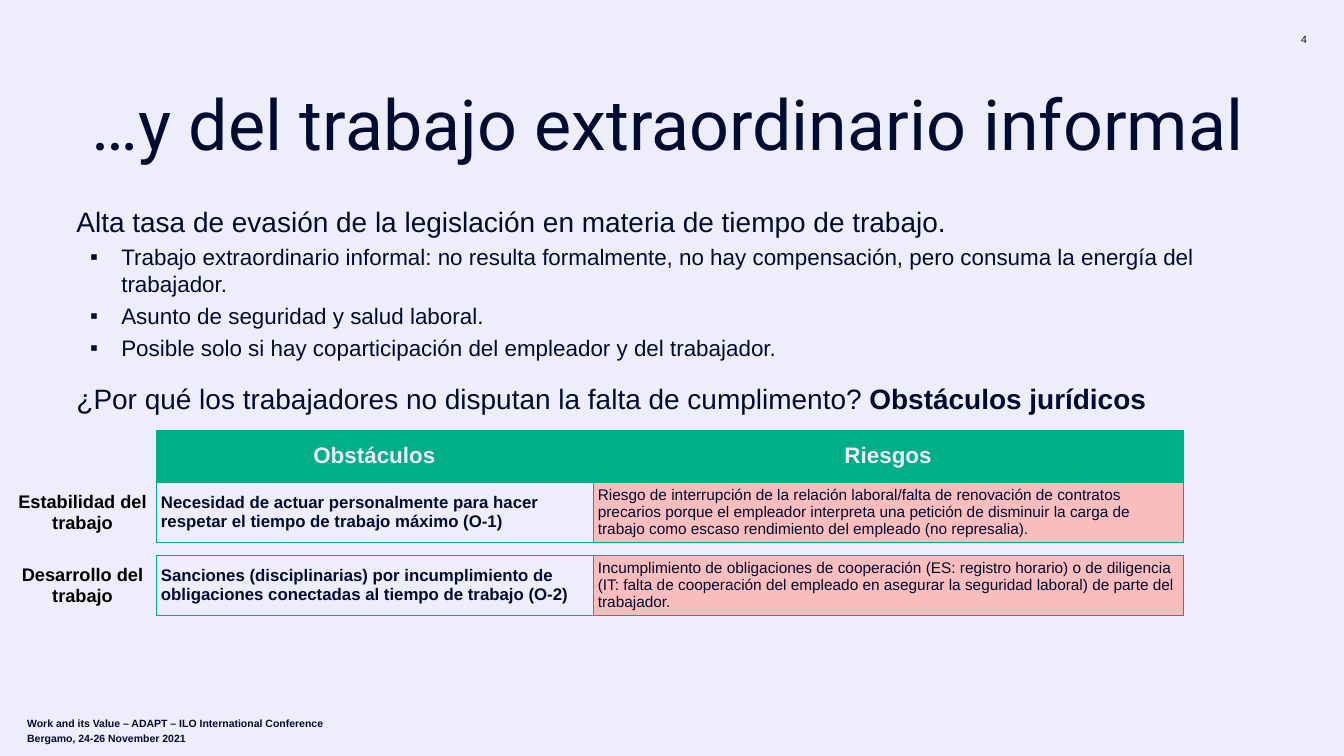
"""Build the slide on informal overtime: obstacles and risks for workers."""
from lxml.etree import SubElement
from pptx import Presentation
from pptx.dml.color import RGBColor as Rgb
from pptx.enum.text import MSO_ANCHOR as Anchor, PP_ALIGN as Align
from pptx.oxml.ns import qn
from pptx.util import Inches, Pt

COLORS = {"page": "EDEDFB", "ink": "000B32", "black": "000000",
          "header": "00AE88", "edge": "00AA85", "risk": "F9BDBE"}

deck = Presentation()
deck.slide_width, deck.slide_height = Inches(26.67), Inches(15)
slide = deck.slides.add_slide(deck.slide_layouts[6])
slide.background.fill.solid()
slide.background.fill.fore_color.rgb = Rgb.from_string(COLORS["page"])
COL, ROW = deck.slide_width / 100, deck.slide_height / 100


def text_frame(left, top, width, height, wrap=True):
    frame = slide.shapes.add_textbox(
        int(left * COL), int(top * ROW), int(width * COL), int(height * ROW)).text_frame
    frame.word_wrap = wrap
    return frame


def add_run(paragraph, words, size, color="ink", bold=False, face="Arial"):
    run = paragraph.add_run()
    run.text = words
    run.font.size, run.font.bold, run.font.name = Pt(size), bold, face
    run.font.color.rgb = Rgb.from_string(COLORS[color])


page_number = text_frame(96.25, 3.8, 1.54, 2.73, wrap=False)
page_number.margin_left = page_number.margin_right = Inches(0.08)
page_number.margin_top = page_number.margin_bottom = Inches(0.08)
page_number.paragraphs[0].alignment = Align.CENTER
add_run(page_number.paragraphs[0], "4", 15)

title = text_frame(2.89, 12.13, 93.59, 9.93)
title.vertical_anchor = Anchor.BOTTOM
title.paragraphs[0].alignment = Align.CENTER
title.paragraphs[0].line_spacing = 0.8
add_run(title.paragraphs[0], "…y del trabajo extraordinario informal", 100, face="Roboto")

body = text_frame(5.32, 26.67, 86.58, 59.33)
add_run(body.paragraphs[0],
        "Alta tasa de evasión de la legislación en materia de tiempo de trabajo.", 40)
for point in (
        "Trabajo extraordinario informal: no resulta formalmente, no hay compensación, "
        "pero consuma la energía del trabajador.",
        "Asunto de seguridad y salud laboral.",
        "Posible solo si hay coparticipación del empleador y del trabajador."):
    bullet = body.add_paragraph()
    bullet.level = 1
    bullet.space_before = Pt(7.5)
    props = bullet._p.get_or_add_pPr()
    props.set("marL", str(Inches(0.89)))
    props.set("indent", str(Inches(-0.62)))
    SubElement(props, qn("a:buFont"), typeface="Arial")
    SubElement(props, qn("a:buChar"), char="▪")
    add_run(bullet, point, 32)
question = body.add_paragraph()
question.space_before = Pt(29)
add_run(question, "¿Por qué los trabajadores no disputan la falta de cumplimento? ", 40)
add_run(question, "Obstáculos jurídicos", 40, bold=True)

footer = text_frame(1.65, 94.47, 27, 2.6)
add_run(footer.paragraphs[0],
        "Work and its Value – ADAPT – ILO International Conference", 15, bold=True)
venue = footer.add_paragraph()
venue.space_before = Pt(3.5)
add_run(venue, "Bergamo, 24-26 November 2021", 15, bold=True)

HEADINGS = ("Obstáculos", "Riesgos")
STABILITY = (
    "Necesidad de actuar personalmente para hacer respetar el tiempo de trabajo máximo (O-1)",
    "Riesgo de interrupción de la relación laboral/falta de renovación de contratos precarios "
    "porque el empleador interpreta una petición de disminuir la carga de trabajo como escaso "
    "rendimiento del empleado (no represalia).")
PROGRESS = (
    "Sanciones (disciplinarias) por incumplimiento de obligaciones conectadas al tiempo de "
    "trabajo (O-2)",
    "Incumplimiento de obligaciones de cooperación (ES: registro horario) o de diligencia "
    "(IT: falta de cooperación del empleado en asegurar la seguridad laboral) de parte del "
    "trabajador.")
SHARES, ROW_SHARE = (32.51, 43.94), 6.8

for top, lines in ((56.93, (HEADINGS, STABILITY)), (73.4, (PROGRESS,))):
    grid = slide.shapes.add_table(
        len(lines), 2, int(11.6 * COL), int(top * ROW), int(sum(SHARES) * COL),
        int(ROW_SHARE * len(lines) * ROW)).table
    grid.first_row = grid.horz_banding = False
    for column, share in zip(grid.columns, SHARES):
        column.width = int(share * COL)
    for r, line in enumerate(lines):
        for c, words in enumerate(line):
            cell = grid.cell(r, c)
            cell.vertical_anchor = Anchor.MIDDLE
            inner = "lnL" if c else "lnR"
            for side in ("lnL", "lnR", "lnT", "lnB"):
                edge = SubElement(cell._tc.get_or_add_tcPr(), qn(f"a:{side}"),
                                  w=str(Pt(1 if side == inner else 0.75)))
                SubElement(SubElement(edge, qn("a:solidFill")), qn("a:srgbClr"),
                           val=COLORS["header" if side == inner else "edge"])
            heading = line is HEADINGS
            if heading or c:
                cell.fill.solid()
                cell.fill.fore_color.rgb = Rgb.from_string(
                    COLORS["header" if heading else "risk"])
            else:
                cell.fill.background()
            entry = cell.text_frame.paragraphs[0]
            if heading:
                entry.alignment = Align.CENTER
                add_run(entry, words, 32, "page", bold=True)
            else:
                add_run(entry, words, 22 if c else 24, bold=c == 0)

for top, theme in ((64.47, "Estabilidad del trabajo"), (74.13, "Desarrollo del trabajo")):
    label = text_frame(0.82, top, 10.65, 6.53).paragraphs[0]
    label.alignment = Align.CENTER
    add_run(label, theme, 26, "black", bold=True)

deck.save("out.pptx")
